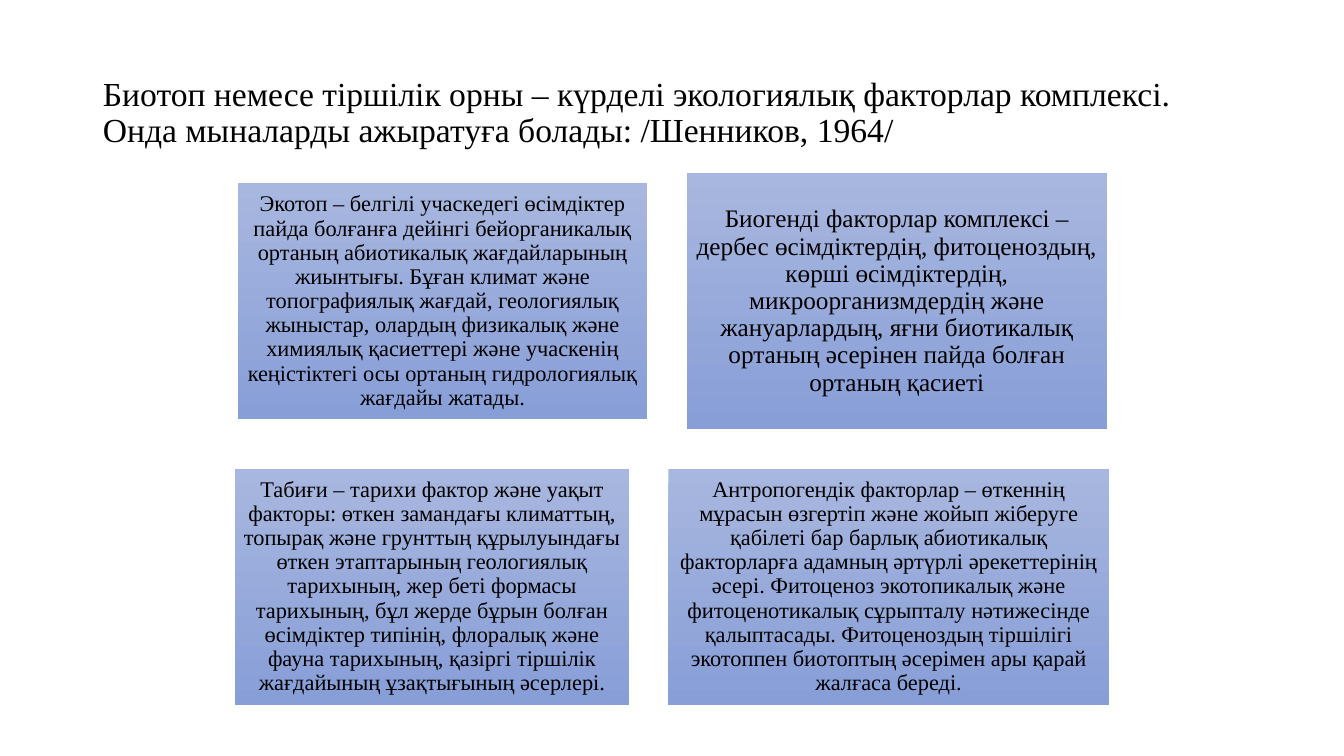
from dataclasses import dataclass

import pptx
import pptx.dml.color
import pptx.enum.shapes
import pptx.enum.text
import pptx.util

Inches = pptx.util.Inches
Color = pptx.dml.color.RGBColor
Align = pptx.enum.text.PP_ALIGN


@dataclass(frozen=True)
class Theme:
    font: str = "Times New Roman"
    ink: str = "000000"
    top: str = "A8B7DF"
    base: str = "889ED7"
    title: int = 24
    large: int = 18
    body: int = 16
    pad: float = 0.07
    pitch: float = 0.9


@dataclass(frozen=True)
class Card:
    left: float
    top: float
    width: float
    height: float
    size: int
    text: str


THEME = Theme()

TITLE = (
    "Биотоп немесе тіршілік орны – күрделі экологиялық факторлар комплексі. "
    "Онда мыналарды ажыратуға болады: /Шенников, 1964/"
)

CARDS = (
    Card(
        2.36, 1.82, 4.06, 2.34, THEME.body,
        "Экотоп – белгілі учаскедегі өсімдіктер пайда болғанға дейінгі "
        "бейорганикалық ортаның абиотикалық жағдайларының жиынтығы. Бұған "
        "климат және топографиялық жағдай, геологиялық жыныстар, олардың "
        "физикалық және химиялық қасиеттері және учаскенің кеңістіктегі осы "
        "ортаның гидрологиялық жағдайы жатады.",
    ),
    Card(
        6.81, 1.72, 4.17, 2.54, THEME.large,
        "Биогенді факторлар комплексі – дербес өсімдіктердің, фитоценоздың, "
        "көрші өсімдіктердің, микроорганизмдердің және жануарлардың, яғни "
        "биотикалық ортаның әсерінен пайда болған ортаның қасиеті",
    ),
    Card(
        2.33, 4.65, 3.91, 2.34, THEME.body,
        "Табиғи – тарихи фактор және уақыт факторы: өткен замандағы "
        "климаттың, топырақ және грунттың құрылуындағы өткен этаптарының "
        "геологиялық тарихының, жер беті формасы тарихының, бұл жерде бұрын "
        "болған өсімдіктер типінің, флоралық және фауна тарихының, қазіргі "
        "тіршілік жағдайының ұзақтығының әсерлері.",
    ),
    Card(
        6.63, 4.65, 4.37, 2.34, THEME.body,
        "Антропогендік факторлар – өткеннің мұрасын өзгертіп және жойып "
        "жіберуге қабілеті бар барлық абиотикалық факторларға адамның әртүрлі "
        "әрекеттерінің әсері. Фитоценоз экотопикалық және фитоценотикалық "
        "сұрыпталу нәтижесінде қалыптасады. Фитоценоздың тіршілігі экотоппен "
        "биотоптың әсерімен ары қарай жалғаса береді.",
    ),
)


def write(shape, text: str, *, size: int, align=Align.LEFT,
          pad_x: float = 0.1, pad_y: float = 0.05) -> None:
    frame = shape.text_frame
    frame.text = text
    frame.word_wrap = True
    frame.auto_size = pptx.enum.text.MSO_AUTO_SIZE.NONE
    frame.vertical_anchor = pptx.enum.text.MSO_ANCHOR.MIDDLE
    frame.margin_left = frame.margin_right = Inches(pad_x)
    frame.margin_top = frame.margin_bottom = Inches(pad_y)
    line = frame.paragraphs[0]
    line.alignment = align
    line.line_spacing = THEME.pitch
    line.space_before = pptx.util.Pt(0)
    font = line.runs[0].font
    font.name = THEME.font
    font.size = pptx.util.Pt(size)
    font.color.rgb = Color.from_string(THEME.ink)


def draw_title(slide) -> None:
    title = slide.shapes.title
    title.left, title.top = Inches(0.92), Inches(0.4)
    title.width, title.height = Inches(11.5), Inches(1.45)
    write(title, TITLE, size=THEME.title)


def draw_card(slide, card: Card) -> None:
    box = slide.shapes.add_shape(
        pptx.enum.shapes.MSO_SHAPE.RECTANGLE,
        Inches(card.left), Inches(card.top),
        Inches(card.width), Inches(card.height),
    )
    box.shadow.inherit = False
    box.line.fill.background()
    box.fill.gradient()
    box.fill.gradient_angle = 270
    for stop, tone in zip(box.fill.gradient_stops, (THEME.top, THEME.base)):
        stop.color.rgb = Color.from_string(tone)
    write(box, card.text, size=card.size, align=Align.CENTER,
          pad_x=THEME.pad, pad_y=THEME.pad)


def main() -> None:
    deck = pptx.Presentation()
    deck.slide_width, deck.slide_height = Inches(13.33), Inches(7.5)
    slide = deck.slides.add_slide(deck.slide_layouts.get_by_name("Title Only"))
    draw_title(slide)
    for card in CARDS:
        draw_card(slide, card)
    deck.save("out.pptx")


if __name__ == "__main__":
    main()
